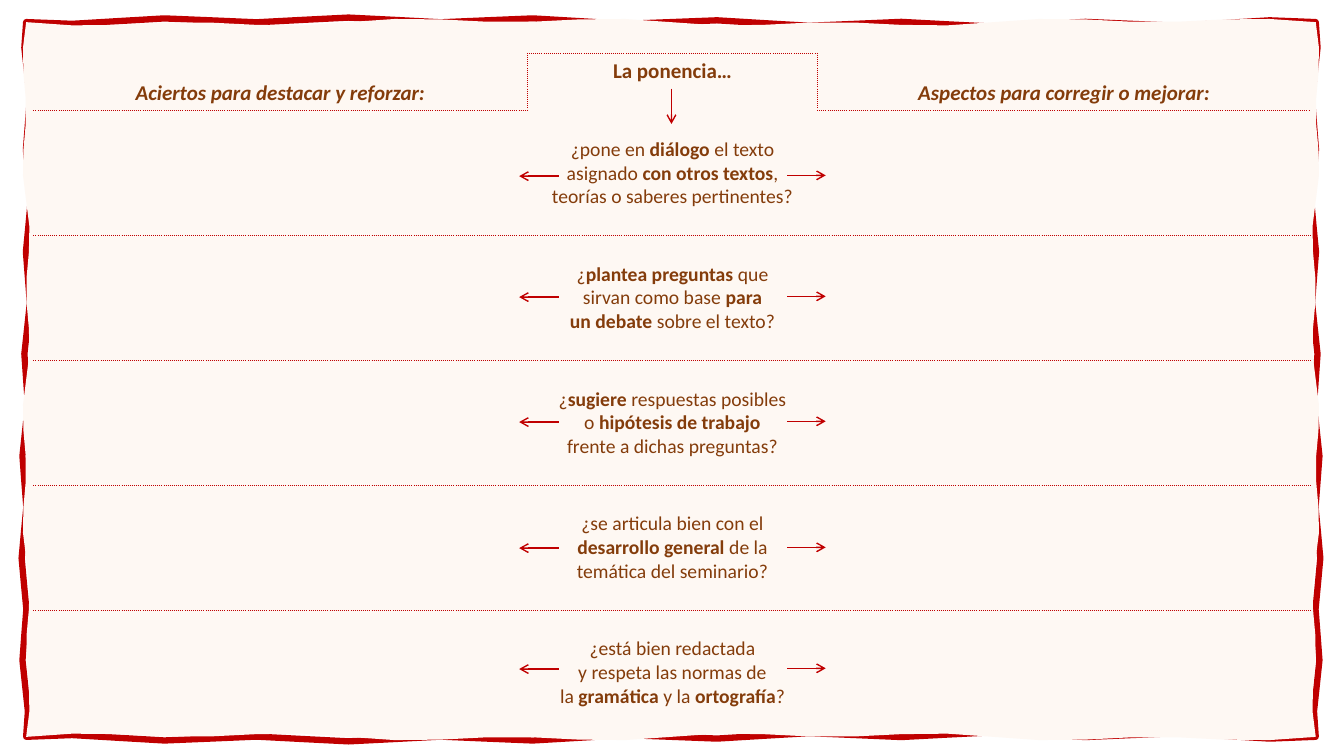
import math

import lxml.etree
import pptx
import pptx.dml.color
import pptx.enum.shapes
import pptx.enum.text
import pptx.oxml.ns
import pptx.util

RED = pptx.dml.color.RGBColor(0xC0, 0x00, 0x00)
BROWN = pptx.dml.color.RGBColor(0x84, 0x3C, 0x0B)
CREAM = pptx.dml.color.RGBColor(0xFE, 0xF8, 0xF3)
FONT = "Calibri"

SLIDE_WIDTH = pptx.util.Inches(13.33)
SLIDE_HEIGHT = pptx.util.Inches(7.5)

FRAME_CORNERS = [(1.95, 2.93), (97.9, 2.93), (97.9, 97.47), (1.95, 97.47)]
GRID_LEFT, GRID_TOP = 2.48, 3.87
COLUMN_SHARES = [36.76, 8.7, 12.9, 26.03, 10.65]
ROW_SHARES = [3.2, 7.6] + [16.53] * 5
ARROW_ROWS = [23.2, 39.2, 55.73, 72.4, 88.4]

QUESTIONS = [
    "¿pone en *diálogo *el texto asignado *con otros textos*,\nteorías o saberes pertinentes?",
    "¿*plantea preguntas *que\nsirvan como base *para\nun debate* sobre el texto?",
    "¿*sugiere* respuestas posibles\no *hipótesis de trabajo\n*frente a dichas preguntas?",
    "¿se articula bien con el\n*desarrollo general *de la\ntemática del seminario?",
    "¿está bien redactada\ny respeta las normas de\nla *gramática *y la *ortografía*?",
]


def across(percent):
    return round(SLIDE_WIDTH * percent / 100)


def down(percent):
    return round(SLIDE_HEIGHT * percent / 100)


def add_wavy_frame(slide, slow, fast):
    depth = down(0.6)
    steps = 28
    outline = []
    for side, (start, end) in enumerate(zip(FRAME_CORNERS, FRAME_CORNERS[1:] + FRAME_CORNERS[:1])):
        for step in range(steps):
            share = step / steps
            ripple = depth * math.sin(2 * math.pi * slow * share) * math.cos(2 * math.pi * fast * share)
            x = across(start[0] + (end[0] - start[0]) * share)
            y = down(start[1] + (end[1] - start[1]) * share)
            outline.append((x, y + round(ripple)) if side % 2 == 0 else (x + round(ripple), y))
    builder = slide.shapes.build_freeform(*outline[0])
    builder.add_line_segments(outline[1:], close=True)
    frame = builder.convert_to_shape()
    frame.shadow.inherit = False
    return frame


def add_paper(slide):
    border = add_wavy_frame(slide, 3, 4)
    border.fill.background()
    border.line.color.rgb = RED
    border.line.width = pptx.util.Pt(4.5)
    paper = add_wavy_frame(slide, 4, 2)
    paper.line.fill.background()
    paper.fill.solid()
    paper.fill.fore_color.rgb = CREAM


def set_borders(cell, dotted_sides):
    properties = cell._tc.get_or_add_tcPr()
    for side in "LRTB":
        border = lxml.etree.SubElement(properties, pptx.oxml.ns.qn("a:ln" + side), w=str(pptx.util.Pt(1)))
        if side in dotted_sides:
            ink = lxml.etree.SubElement(border, pptx.oxml.ns.qn("a:solidFill"))
            lxml.etree.SubElement(ink, pptx.oxml.ns.qn("a:srgbClr"), val=str(RED))
            lxml.etree.SubElement(border, pptx.oxml.ns.qn("a:prstDash"), val="sysDot")
        else:
            lxml.etree.SubElement(border, pptx.oxml.ns.qn("a:noFill"))


def dotted_sides_at(row, column):
    central = column in (1, 2)
    if row == 0:
        return ""
    if row == 1:
        return "LTR" if central else ("RB" if column == 0 else "LB")
    sides = "" if row == 2 and central else "T"
    return sides + ("B" if row < len(ROW_SHARES) - 1 else "")


def write_cell(cell, text, size, anchor, bold=False, italic=False):
    cell.vertical_anchor = anchor
    paragraph = cell.text_frame.paragraphs[0]
    paragraph.alignment = pptx.enum.text.PP_ALIGN.CENTER
    for index, part in enumerate(text.split("*")):
        for line_number, words in enumerate(part.split("\n")):
            if line_number:
                paragraph.add_line_break()
            if not words:
                continue
            run = paragraph.add_run()
            run.text = words
            run.font.name = FONT
            run.font.size = pptx.util.Pt(size)
            run.font.bold = bold or index % 2 == 1
            run.font.italic = italic
            run.font.color.rgb = BROWN


def add_review_table(slide):
    table = slide.shapes.add_table(
        len(ROW_SHARES), len(COLUMN_SHARES), across(GRID_LEFT), down(GRID_TOP),
        across(sum(COLUMN_SHARES)), down(sum(ROW_SHARES)),
    ).table
    table.first_row = False
    table.horz_banding = False
    for column, share in zip(table.columns, COLUMN_SHARES):
        column.width = across(share)
    for row_index, share in enumerate(ROW_SHARES):
        table.rows[row_index].height = down(share)
        for column_index in range(len(COLUMN_SHARES)):
            cell = table.cell(row_index, column_index)
            set_borders(cell, dotted_sides_at(row_index, column_index))
            cell.fill.background()
            lxml.etree.SubElement(cell.text_frame.paragraphs[0]._p, pptx.oxml.ns.qn("a:endParaRPr"), sz="800")
        for first in (0, 2) if row_index == 0 else (1, 3):
            table.cell(row_index, first).merge(table.cell(row_index, first + 1))
    anchors = pptx.enum.text.MSO_ANCHOR
    write_cell(table.cell(1, 0), "Aciertos para destacar y reforzar:", 15, anchors.BOTTOM, True, True)
    write_cell(table.cell(1, 1), "La ponencia…", 15, anchors.TOP, True)
    write_cell(table.cell(1, 3), "Aspectos para corregir o mejorar:", 15, anchors.BOTTOM, True, True)
    for row_index, question in enumerate(QUESTIONS, start=2):
        write_cell(table.cell(row_index, 1), question, 14, anchors.MIDDLE)


def add_arrow(slide, start, end):
    arrow = slide.shapes.add_connector(
        pptx.enum.shapes.MSO_CONNECTOR.STRAIGHT,
        across(start[0]), down(start[1]), across(end[0]), down(end[1]),
    )
    arrow.line.color.rgb = RED
    arrow.line.width = pptx.util.Pt(1)
    lxml.etree.SubElement(arrow.line._get_or_add_ln(), pptx.oxml.ns.qn("a:tailEnd"), type="arrow")
    lxml.etree.SubElement(arrow._element.spPr, pptx.oxml.ns.qn("a:effectLst"))


def main():
    presentation = pptx.Presentation()
    presentation.slide_width = SLIDE_WIDTH
    presentation.slide_height = SLIDE_HEIGHT
    slide = presentation.slides.add_slide(presentation.slide_layouts[6])
    add_paper(slide)
    add_review_table(slide)
    add_arrow(slide, (49.96, 11.73), (49.96, 16.4))
    for height in ARROW_ROWS:
        add_arrow(slide, (58.59, height), (61.44, height))
        add_arrow(slide, (41.56, height + 0.1), (38.63, height + 0.1))
    presentation.save("out.pptx")


if __name__ == "__main__":
    main()
